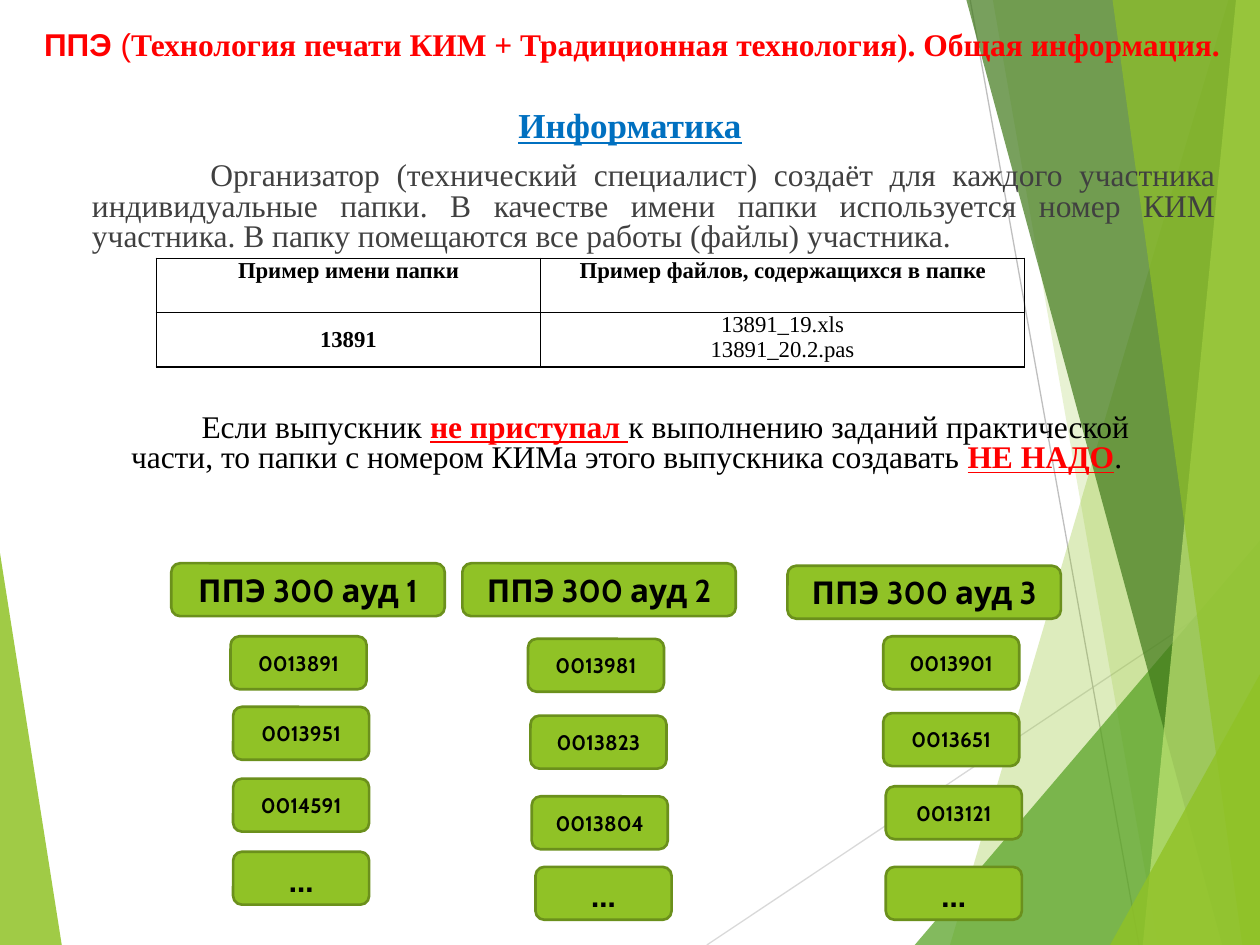
from lxml import etree
from pptx import Presentation
from pptx import util as u
from pptx.dml.color import RGBColor
from pptx.enum import shapes, text
from pptx.oxml.ns import qn

W, H = 10, 7.5
LIME = RGBColor(0x90, 0xC2, 0x26)
GREEN = RGBColor(0x54, 0xA0, 0x21)
DARK = RGBColor(0x3F, 0x78, 0x19)
PALE = RGBColor(0xC0, 0xE4, 0x74)
EDGE = RGBColor(0x6B, 0x90, 0x1C)
RED = RGBColor(0xFF, 0, 0)
BLUE = RGBColor(0, 0x70, 0xC0)
GREY = RGBColor(0x40, 0x40, 0x40)
BLACK = RGBColor(0, 0, 0)
ASH = RGBColor(0xD9, 0xD9, 0xD9)
SILVER = RGBColor(0xBF, 0xBF, 0xBF)
SERIF, SANS, ROUND = "Times New Roman", "Arial", "Cabin"
LEFT, MID, JUST = (text.PP_ALIGN.LEFT, text.PP_ALIGN.CENTER,
                   text.PP_ALIGN.JUSTIFY)

# Background: corner points, colour, opacity in percent
WEDGE = ([(0, 4.39), (0.49, H), (0, H)], LIME, 85)
RAYS = [((5.61, H), (W, 4.57), ASH), ((7.7, 0), (9.04, H), SILVER)]
FACETS = [
    ([(9.75, 0), (7.54, H), (W, H), (W, 0)], LIME, 30),
    ([(7.88, 0), (9.19, H), (W, H), (W, 0)], LIME, 20),
    ([(7.26, H), (W, 4.29), (W, H)], GREEN, 72),
    ([(7.67, 0), (9.7, H), (W, H), (W, 0)], DARK, 70),
    ([(9.81, 0), (9.07, H), (W, H), (W, 0)], PALE, 70),
    ([(8.83, 0), (9.86, H), (W, H), (W, 0)], LIME, 65),
    ([(8.81, H), (W, 5.35), (W, H)], LIME, 80),
]

TITLE = [("ППЭ ", dict(font=SANS, bold=True)), ("(", dict(font=SANS)),
         ("Технология печати КИМ + Традиционная технология). "
          "Общая информация.", dict(bold=True))]
SUBJECT = "Информатика"
RULE = ("Организатор (технический специалист) создаёт для каждого участника "
        "индивидуальные папки. В качестве имени папки используется номер КИМ "
        "участника. В папку помещаются все работы (файлы) участника.")
STRESS = dict(color=RED, bold=True, line=True)
NOTE = [("Если выпускник ", {}), ("не приступал ", STRESS),
        ("к выполнению заданий практической части, то папки с номером КИМа "
         "этого выпускника создавать ", {}), ("НЕ НАДО", STRESS), (".", {})]
TABLE = [["Пример имени папки", "Пример файлов, содержащихся в папке"],
         ["13891", "13891_19.xls\n13891_20.2.pas"]]
COLS, ROW = (3.05, 3.84), 0.43

# Each room: its label, left and top, then its folders in the same form
ROOMS = [
    (("ППЭ 300 ауд 1", 1.36, 4.47),
     [("0013891", 1.83, 5.05), ("0013951", 1.85, 5.61),
      ("0014591", 1.85, 6.18), ("…", 1.85, 6.76)]),
    (("ППЭ 300 ауд 2", 3.67, 4.47),
     [("0013981", 4.19, 5.07), ("0013823", 4.21, 5.68),
      ("0013804", 4.22, 6.32), ("…", 4.25, 6.88)]),
    (("ППЭ 300 ауд 3", 6.25, 4.49),
     [("0013901", 7.01, 5.05), ("0013651", 7.01, 5.66),
      ("0013121", 7.03, 6.24), ("…", 7.03, 6.88)]),
]
ROOM_W, FOLDER_W, BOX_H = 2.17, 1.08, 0.42

prs = Presentation()
prs.slide_width, prs.slide_height = u.Inches(W), u.Inches(H)
slide = prs.slides.add_slide(prs.slide_layouts[6])


def write(frame, words, size=18, font=SERIF, color=BLACK, bold=False,
          line=False, align=LEFT, space=None, indent=0):
    """Fill a frame; words is a string or a list of (string, format) runs."""
    runs = [(words, {})] if isinstance(words, str) else words
    frame.word_wrap = True
    lines = [[]]
    for part, form in runs:
        first, *rest = part.split("\n")
        lines[-1].append((first, form))
        lines += [[(piece, form)] for piece in rest]
    for i, pieces in enumerate(lines):
        para = frame.add_paragraph() if i else frame.paragraphs[0]
        para.alignment = align
        if space:
            para.line_spacing = space
        if indent:
            para._p.get_or_add_pPr().set("indent", str(u.Inches(indent)))
        for piece, form in pieces:
            run = para.add_run()
            run.text = piece
            f = run.font
            f.size = u.Pt(size)
            f.name = form.get("font", font)
            f.bold = form.get("bold", bold)
            f.underline = form.get("line", line)
            f.color.rgb = form.get("color", color)


def label(x, y, w, h, words, **form):
    frame = slide.shapes.add_textbox(*map(u.Inches, (x, y, w, h))).text_frame
    frame.margin_left = frame.margin_right = 0
    frame.margin_top = frame.margin_bottom = 0
    write(frame, words, **form)


def facet(points, color, alpha):
    # The pen takes whole units only, so it draws in hundredths of an inch
    first, *rest = [(round(x * 100), round(y * 100)) for x, y in points]
    pen = slide.shapes.build_freeform(*first, scale=u.Inches(0.01))
    pen.add_line_segments(rest)
    shape = pen.convert_to_shape()
    shape.shadow.inherit = False
    shape.fill.solid()
    shape.fill.fore_color.rgb = color
    shape.line.fill.background()
    tint = shape._element.spPr.find(".//" + qn("a:srgbClr"))
    etree.SubElement(tint, qn("a:alpha"), val=str(alpha * 1000))


def ray(start, end, color):
    wire = slide.shapes.add_connector(shapes.MSO_CONNECTOR.STRAIGHT,
                                      *map(u.Inches, start + end))
    wire.line.color.rgb = color
    wire.line.width = u.Pt(0.75)
    etree.SubElement(wire._element.spPr, qn("a:effectLst"))


def button(words, x, y, w, size):
    box = slide.shapes.add_shape(shapes.MSO_SHAPE.ROUNDED_RECTANGLE,
                                 *map(u.Inches, (x, y, w, BOX_H)))
    box.shadow.inherit = False
    box.fill.solid()
    box.fill.fore_color.rgb = LIME
    box.line.color.rgb = EDGE
    box.line.width = u.Pt(1.5)
    box.text_frame.vertical_anchor = text.MSO_ANCHOR.MIDDLE
    write(box.text_frame, words, size=size, font=ROUND, bold=True, align=MID)


def border(cell):
    props = cell._tc.get_or_add_tcPr()
    for i, side in enumerate(("lnL", "lnR", "lnT", "lnB")):
        edge = etree.Element(qn("a:" + side), w=str(u.Pt(1)))
        fill = etree.SubElement(edge, qn("a:solidFill"))
        etree.SubElement(fill, qn("a:srgbClr"), val=str(BLACK))
        props.insert(i, edge)


def grid(x, y):
    table = slide.shapes.add_table(
        len(TABLE), len(COLS),
        *map(u.Inches, (x, y, sum(COLS), ROW * len(TABLE)))).table
    for col, w in zip(table.columns, COLS):
        col.width = u.Inches(w)
    for r, line in enumerate(TABLE):
        table.rows[r].height = u.Inches(ROW)
        for c, words in enumerate(line):
            cell = table.cell(r, c)
            cell.fill.background()
            cell.margin_left = cell.margin_right = u.Inches(0.07)
            cell.margin_top = cell.margin_bottom = 0
            if r and not c:
                cell.vertical_anchor = text.MSO_ANCHOR.MIDDLE
            write(cell.text_frame, words, size=13, align=MID,
                  bold=not (r and c))
            border(cell)


facet(*WEDGE)
for part in RAYS:
    ray(*part)
for part in FACETS:
    facet(*part)

label(0.25, 0.89, 9.5, 0.3, SUBJECT, size=20, color=BLUE, bold=True,
      line=True, align=MID, space=0.8)
label(0.73, 1.29, 8.92, 0.75, RULE, color=GREY, align=JUST, space=0.8,
      indent=0.94)
label(1.04, 3.29, 8.16, 0.5, NOTE, space=0.8, indent=0.56)
grid(1.24, 2.05)
for room, folders in ROOMS:
    button(*room, ROOM_W, 18)
    for folder in folders:
        button(*folder, FOLDER_W, 20 if folder[0] == "…" else 12)
label(0.35, 0.2, 9.55, 0.3, TITLE, color=RED)

prs.save("out.pptx")
